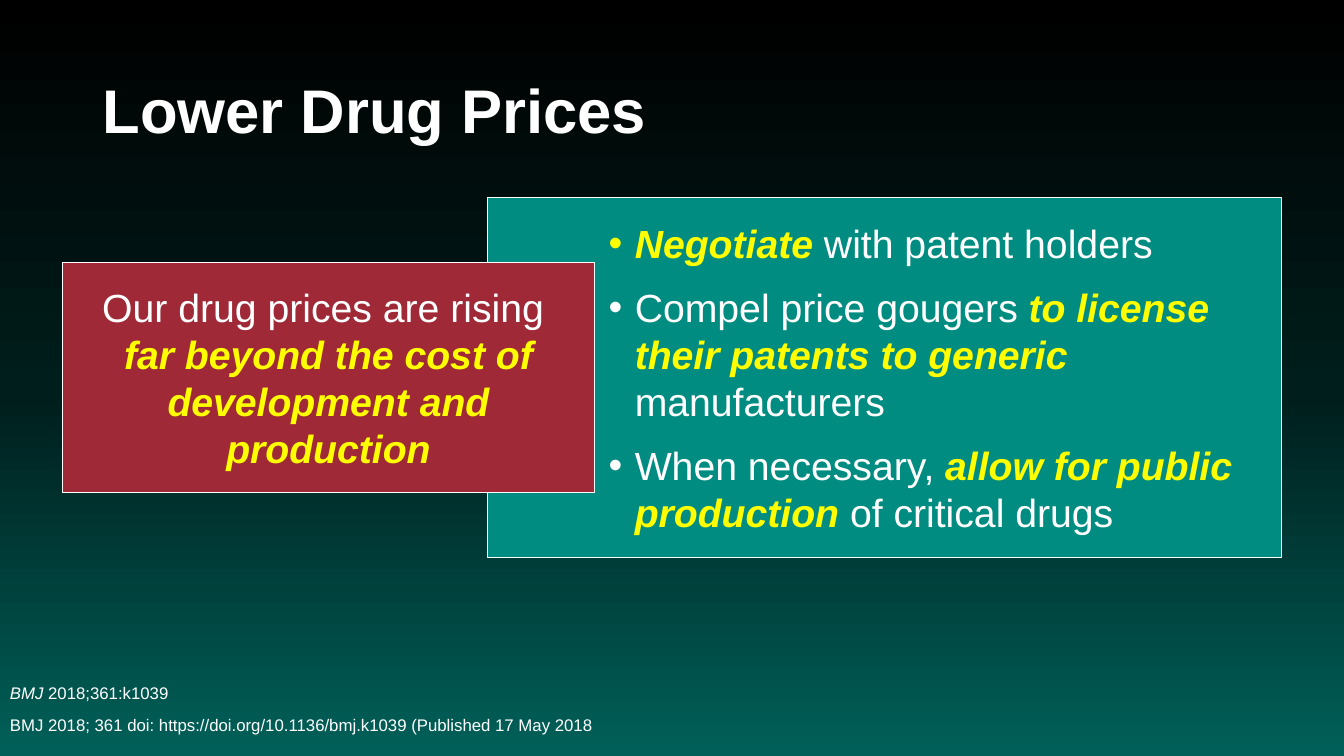
"""Build the slide on lowering drug prices."""
import pptx
import pptx.dml.color
import pptx.enum.shapes
import pptx.enum.text
import pptx.oxml
import pptx.oxml.ns
import pptx.util

Pt = pptx.util.Pt
qn = pptx.oxml.ns.qn
ALIGN = pptx.enum.text.PP_ALIGN
MIDDLE = pptx.enum.text.MSO_ANCHOR.MIDDLE
WHITE, YELLOW, TEAL, RED = "FFFFFF", "FFFF00", "008C81", "9F2936"
STRONG = dict(color=YELLOW, bold=True, italic=True)


def rgb(value):
    return pptx.dml.color.RGBColor.from_string(value)


def add_run(p, text, size=28, color=WHITE, bold=False, italic=False, font="Arial"):
    r = p.add_run()
    r.text = text
    r.font.name, r.font.size = font, Pt(size)
    r.font.bold, r.font.italic = bold, italic
    r.font.color.rgb = rgb(color)


class Deck:
    def __init__(self, width, height):
        self.prs = pptx.Presentation()
        self.prs.slide_width, self.prs.slide_height = Pt(width), Pt(height)
        self.s = self.prs.slides.add_slide(self.prs.slide_layouts[5])

    def background(self, stops):
        fill = self.s.background.fill
        fill.gradient()
        fill.gradient_angle = 270
        gs_list = self.s._element.find(".//" + qn("a:gsLst"))
        for gs in list(gs_list):
            gs_list.remove(gs)
        for percent, color in stops:
            gs = pptx.oxml.parse_xml(
                f'<a:gs {pptx.oxml.ns.nsdecls("a")} pos="{percent * 1000}">'
                f'<a:srgbClr val="{color}"/></a:gs>')
            gs_list.append(gs)

    def paragraphs(self, tf, rows, size, align=ALIGN.LEFT, before=0, after=0,
                   spacing=1.0, bullet=False):
        tf.word_wrap, tf.vertical_anchor = True, MIDDLE
        for i, row in enumerate(rows):
            p = tf.add_paragraph() if i else tf.paragraphs[0]
            p.alignment, p.line_spacing = align, spacing
            p.space_before, p.space_after = Pt(before if i else 0), Pt(after)
            if bullet:
                pPr = p._p.get_or_add_pPr()
                pPr.set("marL", str(Pt(18.75)))
                pPr.set("indent", str(-Pt(18.75)))
                pPr.append(pptx.oxml.parse_xml(
                    f'<a:buFont {pptx.oxml.ns.nsdecls("a")} typeface="Arial"/>'))
                pPr.append(pptx.oxml.parse_xml(
                    f'<a:buChar {pptx.oxml.ns.nsdecls("a")} char="•"/>'))
            for text, style in row:
                add_run(p, text, **{"size": size, **style})

    def title(self, text, box):
        sp = self.s.shapes.title
        sp.left, sp.top, sp.width, sp.height = map(Pt, box)
        self.paragraphs(sp.text_frame, [[(text, {"bold": True})]], 44, spacing=0.9)

    def text(self, rows, box, size, **layout):
        sp = self.s.shapes.add_textbox(*map(Pt, box))
        self.paragraphs(sp.text_frame, rows, size, **layout)

    def panel(self, rows, box, fill, inset=14.4, left_inset=14.4, **layout):
        sp = self.s.shapes.add_shape(
            pptx.enum.shapes.MSO_SHAPE.RECTANGLE, *map(Pt, box))
        sp.shadow.inherit = False
        sp.fill.solid()
        sp.fill.fore_color.rgb = rgb(fill)
        sp.line.color.rgb, sp.line.width = rgb(WHITE), Pt(0.75)
        tf = sp.text_frame
        tf.margin_top = tf.margin_right = tf.margin_bottom = Pt(inset)
        tf.margin_left = Pt(left_inset)
        tf.auto_size = pptx.enum.text.MSO_AUTO_SIZE.SHAPE_TO_FIT_TEXT
        self.paragraphs(tf, rows, 28, **layout)


def main():
    deck = Deck(960, 540)
    deck.background([(0, "000000"), (52, "001E1C"), (100, "006059")])
    deck.title("Lower Drug Prices", (66, 28.75, 828, 104.4))
    deck.text([
        [("BMJ", {"italic": True}), (" 2018;361:k1039", {})],
        [("BMJ 2018; 361 doi: https://doi.org/10.1136/bmj.k1039 (Published 17 May 2018", {})],
    ], (0, 474, 648, 66), 12, before=10, spacing=0.9)
    deck.panel([
        [("Negotiate", STRONG), (" with patent holders", {})],
        [("Compel price gougers ", {}),
         ("to license their patents to generic ", STRONG), ("manufacturers", {})],
        [("When necessary, ", {}), ("allow for public production", STRONG),
         (" of critical drugs", {})],
    ], (348.3, 141, 567, 257), TEAL, left_inset=86.4, after=12, bullet=True)
    deck.panel([
        [("Our drug prices are rising ", {})],
        [("far beyond the cost of development and production", STRONG)],
    ], (44.5, 187.3, 380.2, 164.7), RED, align=ALIGN.CENTER)
    deck.prs.save("out.pptx")


if __name__ == "__main__":
    main()
